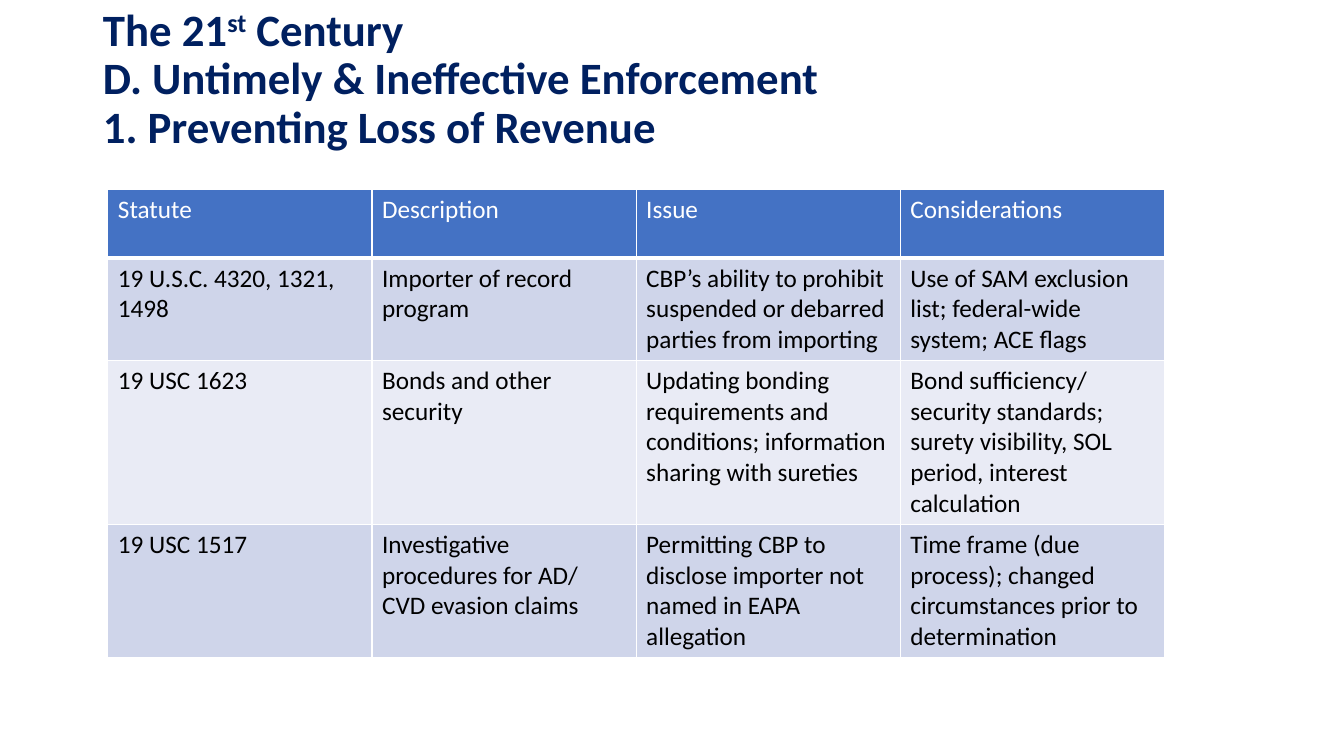
from pptx import Presentation
from pptx.dml.color import RGBColor
from pptx.enum.text import MSO_ANCHOR, MSO_AUTO_SIZE, PP_ALIGN
from pptx.oxml import parse_xml
from pptx.oxml.ns import nsdecls
from pptx.util import Pt

EMU_PER_PX = 9144
FONT = "Calibri"
NAVY = RGBColor(0x00, 0x20, 0x60)
BLUE = RGBColor(0x44, 0x72, 0xC4)
BAND_DARK = RGBColor(0xCF, 0xD5, 0xEA)
BAND_LIGHT = RGBColor(0xE9, 0xEB, 0xF5)
WHITE = RGBColor(0xFF, 0xFF, 0xFF)
BLACK = RGBColor(0x00, 0x00, 0x00)

TITLE_RUNS = [
    ("The 21", False),
    ("st", True),
    (" Century", False),
    ("\n", False),
    ("D. Untimely & Ineffective Enforcement", False),
    ("\n", False),
    ("1. Preventing Loss of Revenue", False),
]
STATUTES = [
    ("Statute", "Description", "Issue", "Considerations"),
    (
        "19 U.S.C. 4320, 1321, 1498",
        "Importer of record program",
        "CBP’s ability to prohibit suspended or debarred parties from importing",
        "Use of SAM exclusion list; federal-wide system; ACE flags",
    ),
    (
        "19 USC 1623",
        "Bonds and other security",
        "Updating bonding requirements and conditions; information sharing with sureties",
        "Bond sufficiency/ security standards; surety visibility, SOL period, interest calculation",
    ),
    (
        "19 USC 1517",
        "Investigative procedures for AD/ CVD evasion claims",
        "Permitting CBP to disclose importer not named in EAPA allegation",
        "Time frame (due process); changed circumstances prior to determination",
    ),
]
ROW_HEIGHTS = [68, 101, 162, 131]
COLUMN_WIDTH = 262


def px(length):
    return length * EMU_PER_PX


def format_font(font, size, color, bold):
    font.name = FONT
    font.size = Pt(size)
    font.color.rgb = color
    font.bold = bold


def set_title(title):
    title.left, title.top, title.width, title.height = map(px, (92, 7, 1150, 145))
    text_frame = title.text_frame
    text_frame.word_wrap = True
    text_frame.auto_size = MSO_AUTO_SIZE.NONE
    text_frame.vertical_anchor = MSO_ANCHOR.MIDDLE
    paragraph = text_frame.paragraphs[0]
    paragraph.alignment = PP_ALIGN.LEFT
    paragraph.line_spacing = 0.9
    for text, raised in TITLE_RUNS:
        if text == "\n":
            paragraph.add_line_break()
            continue
        run = paragraph.add_run()
        run.text = text
        format_font(run.font, 32, NAVY, True)
        if raised:
            run.font._element.set("baseline", "30000")


def set_borders(cell, bottom_width):
    properties = cell._tc.get_or_add_tcPr()
    for side, width in (("L", 1), ("R", 1), ("T", 1), ("B", bottom_width)):
        properties.append(parse_xml(
            f'<a:ln{side} {nsdecls("a")} w="{Pt(width)}"><a:solidFill>'
            f'<a:srgbClr val="{WHITE}"/></a:solidFill></a:ln{side}>'
        ))


def fill_cell(cell, text, fill, color, bottom_width):
    cell.text_frame.text = text
    format_font(cell.text_frame.paragraphs[0].runs[0].font, 18, color, False)
    set_borders(cell, bottom_width)
    cell.fill.solid()
    cell.fill.fore_color.rgb = fill


def add_statute_table(slide):
    columns = len(STATUTES[0])
    table = slide.shapes.add_table(
        len(STATUTES), columns, px(107), px(188),
        px(COLUMN_WIDTH * columns), px(sum(ROW_HEIGHTS)),
    ).table
    for column in table.columns:
        column.width = px(COLUMN_WIDTH)
    for index, (texts, height) in enumerate(zip(STATUTES, ROW_HEIGHTS)):
        row = table.rows[index]
        row.height = px(height)
        if index == 0:
            style = (BLUE, WHITE, 3)
        else:
            style = (BAND_DARK if index % 2 else BAND_LIGHT, BLACK, 1)
        for cell, text in zip(row.cells, texts):
            fill_cell(cell, text, *style)


def main():
    presentation = Presentation()
    presentation.slide_width = px(1333)
    presentation.slide_height = px(750)
    slide = presentation.slides.add_slide(presentation.slide_layouts[5])
    set_title(slide.shapes.title)
    add_statute_table(slide)
    presentation.save("out.pptx")


if __name__ == "__main__":
    main()
